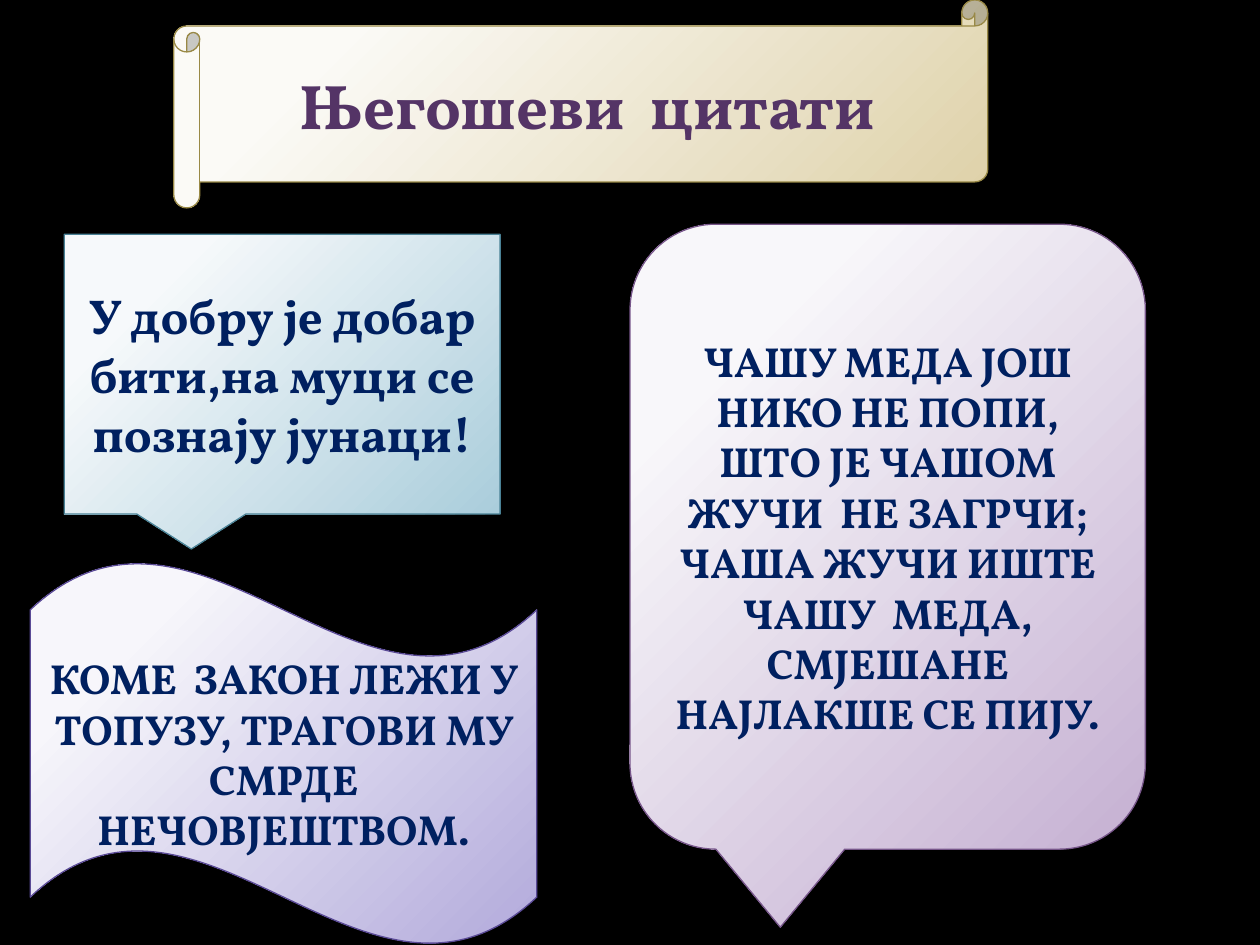
"""Build a slide of Njegoš quotations set in four gradient shapes."""
from dataclasses import dataclass

import pptx
import pptx.dml.color
import pptx.enum.shapes
import pptx.enum.text
import pptx.oxml
import pptx.oxml.ns
import pptx.util

SHAPES = pptx.enum.shapes.MSO_SHAPE


@dataclass(frozen=True)
class Theme:
    """Hold the colours, type sizes and line width of the slide."""

    font: str = "Vollkorn"
    background: str = "000000"
    title_text: str = "543466"
    quote_text: str = "002060"
    title_size: int = 36
    large_size: int = 28
    quote_size: int = 24
    line_width: float = 0.75
    gold: tuple = ("FBFAF6", "DED1A8", "998946")
    blue: tuple = ("F6F9FB", "AACDDB", "4A8296")
    purple: tuple = ("F8F7FA", "C5B0D2", "77568A")
    violet: tuple = ("F7F6FB", "B2AADB", "5A4A96")


THEME = Theme()


def rgb(value):
    """Return a colour object for a hexadecimal string."""
    return pptx.dml.color.RGBColor.from_string(value)


def apply_format(target, values):
    """Set each named attribute of the target."""
    for name, value in values.items():
        setattr(target, name, value)


def make_element(markup):
    """Return a drawing element with its namespace declared."""
    tag, rest = markup.split(" ", 1)
    return pptx.oxml.parse_xml(f"{tag} {pptx.oxml.ns.nsdecls('a')} {rest}")


def fill_radial(shape, start, end):
    """Fill a shape with a circular gradient from the top left corner."""
    shape.fill.gradient()
    for stop, position, colour in zip(shape.fill.gradient_stops, (0.2, 1), (start, end)):
        stop.position = position
        stop.color.rgb = rgb(colour)
    linear = shape.element.spPr.find(".//" + pptx.oxml.ns.qn("a:lin"))
    linear.getparent().replace(linear, make_element(
        '<a:path path="circle"><a:fillToRect l="-15000" t="-15000"'
        ' r="115000" b="115000"/></a:path>'))


def cast_shadow(shape):
    """Give a shape a soft shadow towards the lower right."""
    shape.shadow.inherit = False
    effects = shape.element.spPr.find(pptx.oxml.ns.qn("a:effectLst"))
    effects.append(make_element(
        '<a:outerShdw blurRad="130000" dist="101600" dir="2700000" algn="tl"'
        ' rotWithShape="0"><a:srgbClr val="000000"><a:alpha val="35000"/>'
        '</a:srgbClr></a:outerShdw>'))


def write_text(shape, lines, size, colour):
    """Write centred bold paragraphs into a shape."""
    apply_format(shape.text_frame, {
        "word_wrap": True,
        "vertical_anchor": pptx.enum.text.MSO_ANCHOR.MIDDLE,
        "text": "\n".join(lines),
    })
    for paragraph in shape.text_frame.paragraphs:
        paragraph.alignment = pptx.enum.text.PP_ALIGN.CENTER
        for run in paragraph.runs:
            apply_format(run.font, {
                "name": THEME.font, "size": pptx.util.Pt(size), "bold": True})
            run.font.color.rgb = rgb(colour)


def add_panel(presentation, slide, kind, box, palette, lines, size, colour=THEME.quote_text):
    """Add a panel whose box is in percent of the slide's width and height."""
    sides = (presentation.slide_width, presentation.slide_height) * 2
    shape = slide.shapes.add_shape(
        kind, *(round(side * share / 100) for side, share in zip(sides, box)))
    start, end, outline = palette
    fill_radial(shape, start, end)
    shape.line.color.rgb = rgb(outline)
    shape.line.width = pptx.util.Pt(THEME.line_width)
    cast_shadow(shape)
    write_text(shape, lines, size, colour)


def main():
    """Build and save the presentation."""
    presentation = pptx.Presentation()
    apply_format(presentation, {
        "slide_width": pptx.util.Inches(10), "slide_height": pptx.util.Inches(7.5)})
    slide = presentation.slides.add_slide(presentation.slide_layouts[6])
    slide.background.fill.solid()
    slide.background.fill.fore_color.rgb = rgb(THEME.background)

    add_panel(presentation, slide, SHAPES.HORIZONTAL_SCROLL, (13.8, 0, 64.6, 22),
              THEME.gold, ["Његошеви  цитати"], THEME.title_size, THEME.title_text)
    add_panel(presentation, slide, SHAPES.RECTANGULAR_CALLOUT, (5.1, 24.8, 34.6, 29.6),
              THEME.blue, ["У добру је добар бити,на муци се познају јунаци!"],
              THEME.large_size)
    add_panel(presentation, slide, SHAPES.ROUNDED_RECTANGULAR_CALLOUT,
              (50, 23.73, 40.9, 66.13), THEME.purple,
              ["ЧАШУ МЕДА ЈОШ НИКО НЕ ПОПИ,",
               "ШТО ЈЕ ЧАШОМ ЖУЧИ  НЕ ЗАГРЧИ;",
               "ЧАША ЖУЧИ ИШТЕ ЧАШУ  МЕДА,",
               "СМЈЕШАНЕ НАЈЛАКШЕ СЕ ПИЈУ."], THEME.quote_size)
    add_panel(presentation, slide, SHAPES.WAVE, (2.4, 59.47, 40.2, 40.53), THEME.violet,
              ["КОМЕ  ЗАКОН ЛЕЖИ У ТОПУЗУ, ТРАГОВИ МУ СМРДЕ НЕЧОВЈЕШТВОМ."],
              THEME.quote_size)

    presentation.save("out.pptx")


if __name__ == "__main__":
    main()
